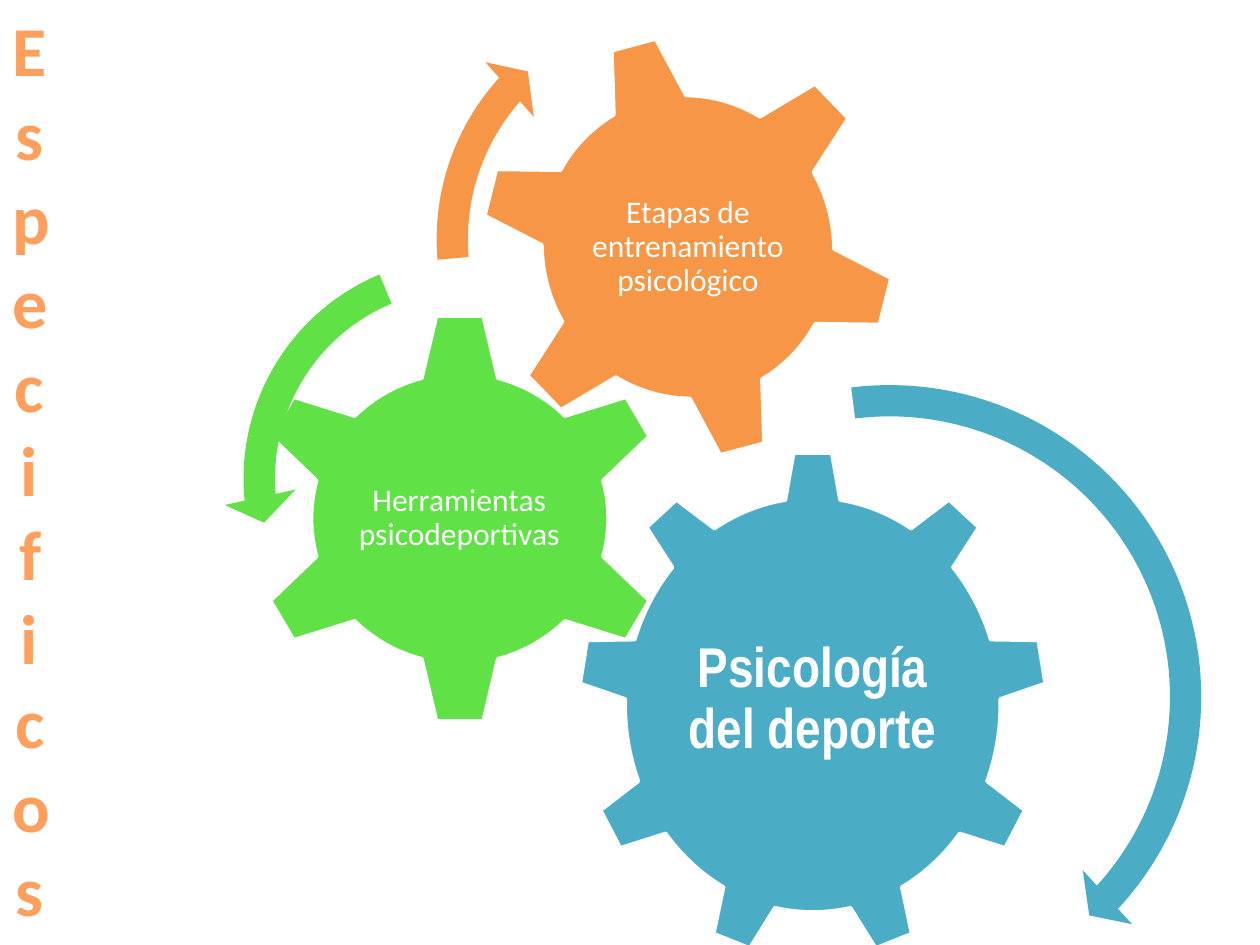
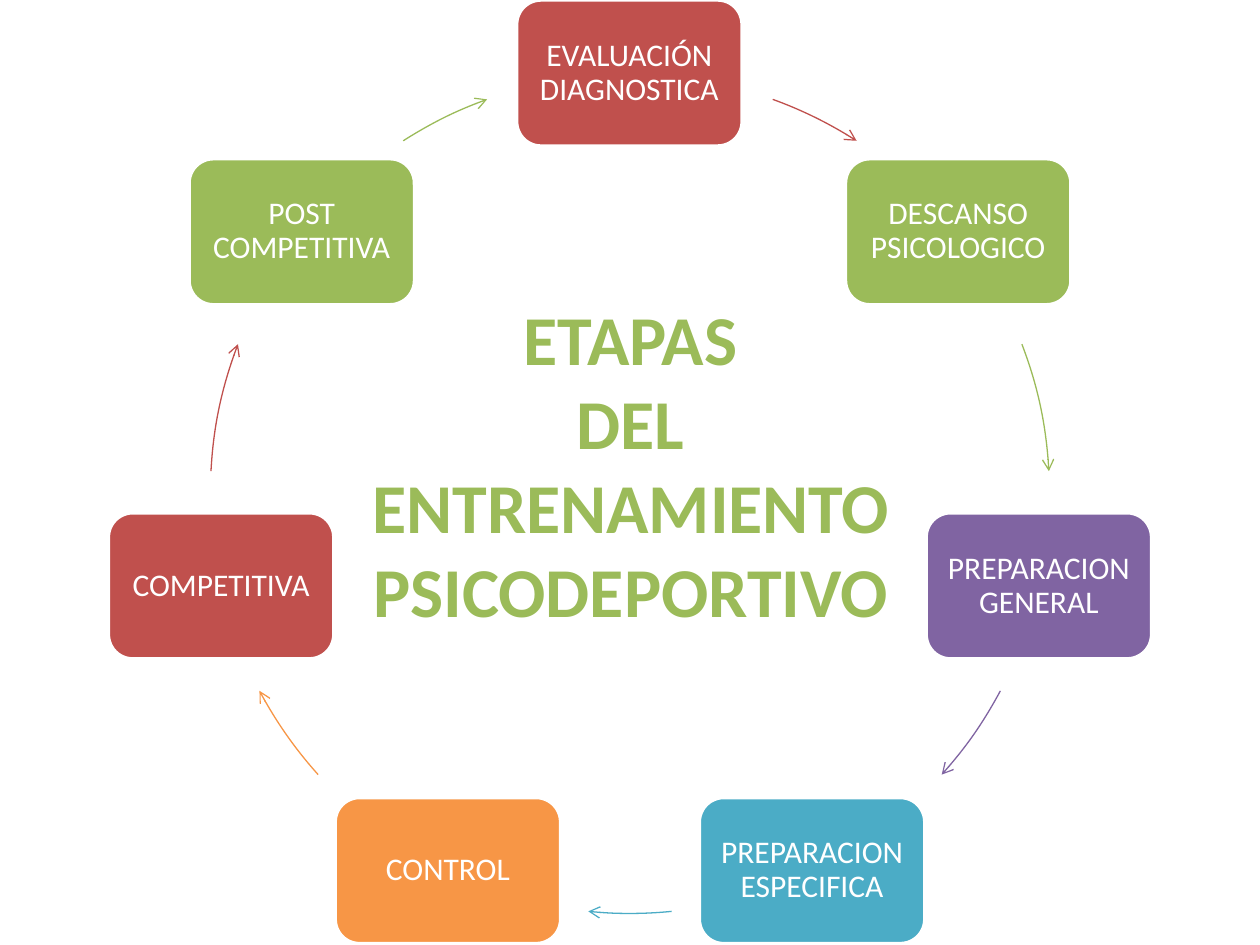
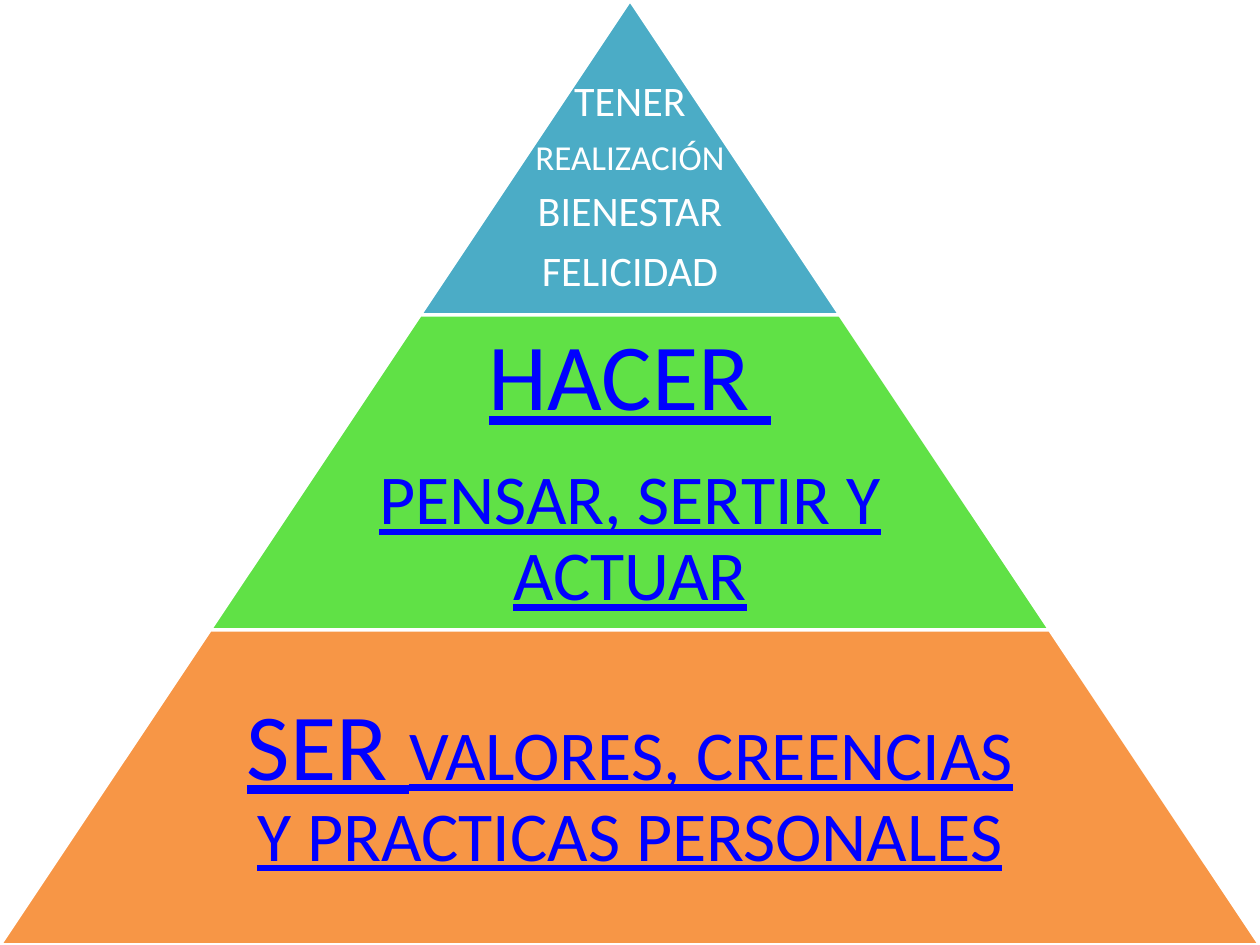
"""Build three slides on sport psychology: gears, training cycle and pyramid."""
from lxml import etree
from pptx import Presentation
from pptx import util as u
from pptx.dml.color import RGBColor
from pptx.enum import shapes, text
from pptx.oxml import ns

SCALE = 9144
WHITE = RGBColor(0xFF, 0xFF, 0xFF)
TEAL = RGBColor(0x4B, 0xAC, 0xC6)
LIME = RGBColor(0x60, 0xE1, 0x46)
ORANGE = RGBColor(0xF7, 0x96, 0x46)
RED = RGBColor(0xC0, 0x50, 0x4D)
OLIVE = RGBColor(0x9B, 0xBB, 0x59)
PURPLE = RGBColor(0x80, 0x64, 0xA2)
BLUE = RGBColor(0x00, 0x00, 0xFF)
GLOW = [(0, "FFA367"), (25, "FF9F5D"), (50, "F38E3A"), (75, "FF9F5D"), (100, "FFA367")]
MIDDLE = text.MSO_ANCHOR.MIDDLE
SHAPE = shapes.MSO_SHAPE


def px(length):
    return u.Emu(round(length * SCALE))


def set_values(target, values):
    for name, value in values.items():
        setattr(target, name, value)


class Deck:
    """Holds the shared style and the slide being drawn."""

    def __init__(self, width, height):
        self.deck = Presentation()
        set_values(self.deck, {"slide_width": px(width), "slide_height": px(height)})
        self.slide = None

    def new_slide(self):
        self.slide = self.deck.slides.add_slide(self.deck.slide_layouts[6])

    def outline(self, kind, box, adjustments=()):
        shape = self.slide.shapes.add_shape(kind, *map(px, box))
        shape.shadow.inherit = False
        for index, value in enumerate(adjustments):
            shape.adjustments[index] = value
        return shape

    def block(self, kind, box, color, adjustments=(), border=2, rotation=0):
        shape = self.outline(kind, box, adjustments)
        shape.rotation = rotation
        shape.fill.solid()
        shape.fill.fore_color.rgb = color
        if border:
            shape.line.color.rgb = WHITE
            shape.line.width = u.Pt(border)
        else:
            shape.line.fill.background()
        return shape

    def arc_arrow(self, box, start, end, color):
        arc = self.outline(SHAPE.ARC, box, [(angle - 90) % 360 * 0.6 for angle in (start, end)])
        arc.fill.background()
        arc.line.color.rgb = color
        arc.line.width = u.Pt(0.75)
        line = arc._element.spPr.find(ns.qn("a:ln"))
        etree.SubElement(line, ns.qn("a:tailEnd"), type="arrow")

    def set_text(self, frame, paragraphs, margin=7, top=None, compact=True, **font):
        set_values(frame, {"word_wrap": True, "vertical_anchor": MIDDLE,
                           "margin_left": px(margin), "margin_right": px(margin),
                           "margin_bottom": px(margin),
                           "margin_top": px(margin if top is None else top)})
        for index, runs in enumerate(paragraphs):
            paragraph = frame.add_paragraph() if index else frame.paragraphs[0]
            paragraph.alignment = text.PP_ALIGN.CENTER
            if compact:
                largest = max(size for _, size in runs)
                set_values(paragraph, {"line_spacing": 0.9, "space_after": u.Pt(0.35 * largest)})
            for words, size in runs:
                self.add_run(paragraph, words, size, **font)

    def add_run(self, paragraph, words, size, color=WHITE, **font):
        run = paragraph.add_run()
        run.text = words
        run.font.color.rgb = color
        set_values(run.font, {"name": "Calibri", "size": u.Pt(size), **font})

    def label(self, box, paragraphs, **style):
        frame = self.slide.shapes.add_textbox(*map(px, box)).text_frame
        self.set_text(frame, paragraphs, **style)
        return frame

    def heading(self, box, lines, color, wrap):
        frame = self.label(box, [[(line, 40)] for line in lines], margin=10, top=5,
                           compact=False, color=color, bold=True)
        set_values(frame, {"word_wrap": wrap, "vertical_anchor": text.MSO_ANCHOR.TOP,
                           "margin_bottom": px(5),
                           "auto_size": text.MSO_AUTO_SIZE.SHAPE_TO_FIT_TEXT})
        return frame

    def gradient_text(self, run, stops):
        properties = run._r.get_or_add_rPr()
        properties.remove(properties.find(ns.qn("a:solidFill")))
        gradient = etree.Element(ns.qn("a:gradFill"))
        stop_list = etree.SubElement(gradient, ns.qn("a:gsLst"))
        for percent, color in stops:
            stop = etree.SubElement(stop_list, ns.qn("a:gs"), pos=str(percent * 1000))
            etree.SubElement(stop, ns.qn("a:srgbClr"), val=color)
        etree.SubElement(gradient, ns.qn("a:lin"), ang="5400000")
        properties.insert(0, gradient)


def draw_gears(deck):
    deck.new_slide()
    gears = [
        (SHAPE.GEAR_9, (459, 358, 372, 403), TEAL, 0, (534, 450, 222, 211),
         "Psicología del deporte", 32, {"margin": 4, "name": "Arial Narrow", "bold": True}),
        (SHAPE.GEAR_6, (198, 247, 334, 329), LIME, 0, (281, 330, 167, 162),
         "Herramientas psicodeportivas", 18, {"margin": 3}),
        (SHAPE.GEAR_6, (381, 26, 330, 340), ORANGE, 345, (453, 101, 186, 190),
         "Etapas de entrenamiento psicológico", 18, {"margin": 3}),
    ]
    for kind, box, color, rotation, label_box, topic, size, style in gears:
        deck.block(kind, box, color, rotation=rotation)
        deck.label(label_box, [[(topic, size)]], **style)
    turns = [
        (SHAPE.CIRCULAR_ARROW, (442, 289, 528, 528), TEAL, (0.047, 2.99, 25.567, 157.765, 0.055)),
        (SHAPE.LEFT_CIRCULAR_ARROW, (177, 188, 384, 384), LIME,
         (0.065, 4.3, 104.891, 148.378, 0.075)),
        (SHAPE.CIRCULAR_ARROW, (330, -17, 414, 414), ORANGE,
         (0.06, 3.941, 133.138, 105.082, 0.07)),
    ]
    for kind, box, color, bend in turns:
        deck.block(kind, box, color, bend, border=0)
    title = deck.heading((0, 0, 47, 751), ["Especificos"], ORANGE, True)
    deck.gradient_text(title.paragraphs[0].runs[0], GLOW)


def draw_cycle(deck):
    deck.new_slide()
    ring = (167, 59, 666, 666)
    stages = [
        ("EVALUACIÓN DIAGNOSTICA", RED, (410, 0), (19.9, 32.7)),
        ("DESCANSO PSICOLOGICO", OLIVE, (671, 126), (69.1, 86.9)),
        ("PREPARACION GENERAL", PURPLE, (735, 407), (118, 132)),
        ("PREPARACION ESPECIFICA", TEAL, (555, 633), (174.3, 185.7)),
        ("CONTROL", ORANGE, (266, 633), (228, 242)),
        ("COMPETITIVA", RED, (86, 407), (273.1, 290.9)),
        ("POST COMPETITIVA", OLIVE, (150, 126), (327.3, 340.1)),
    ]
    for stage, color, corner, (start, end) in stages:
        card = deck.block(SHAPE.ROUNDED_RECTANGLE, (*corner, 179, 116), color)
        deck.set_text(card.text_frame, [[(stage, 18)]])
        deck.arc_arrow(ring, start, end, color)
    deck.heading((283, 230, 435, 279), ["ETAPAS", "DEL", "ENTRENAMIENTO", "PSICODEPORTIVO"],
                 OLIVE, False)


def draw_pyramid(deck):
    deck.new_slide()
    link = {"color": BLUE, "underline": True}
    tiers = [
        (TEAL, 333, [[("TENER", 24)], [("REALIZACIÓN", 20)], [("BIENESTAR", 24)],
                     [("FELICIDAD", 24)]], {"margin": 3, "top": 51}),
        (LIME, 433, [[("HACER ", 54)], [("PENSAR, SERTIR Y ACTUAR", 40)]], link),
        (ORANGE, 650, [[("SER ", 54), ("VALORES, CREENCIAS Y PRACTICAS PERSONALES", 40)]], link),
    ]
    height = 250
    for level, (color, label_width, paragraphs, style) in enumerate(tiers):
        width = 1000 * (level + 1) / len(tiers)
        top = level * height
        deck.block(SHAPE.TRAPEZOID, (500 - width / 2, top, width, height), color, [0.667])
        deck.label((500 - label_width / 2, top, label_width, height), paragraphs, **style)


def main():
    deck = Deck(1000, 750)
    draw_gears(deck)
    draw_cycle(deck)
    draw_pyramid(deck)
    deck.deck.save("out.pptx")


if __name__ == "__main__":
    main()
